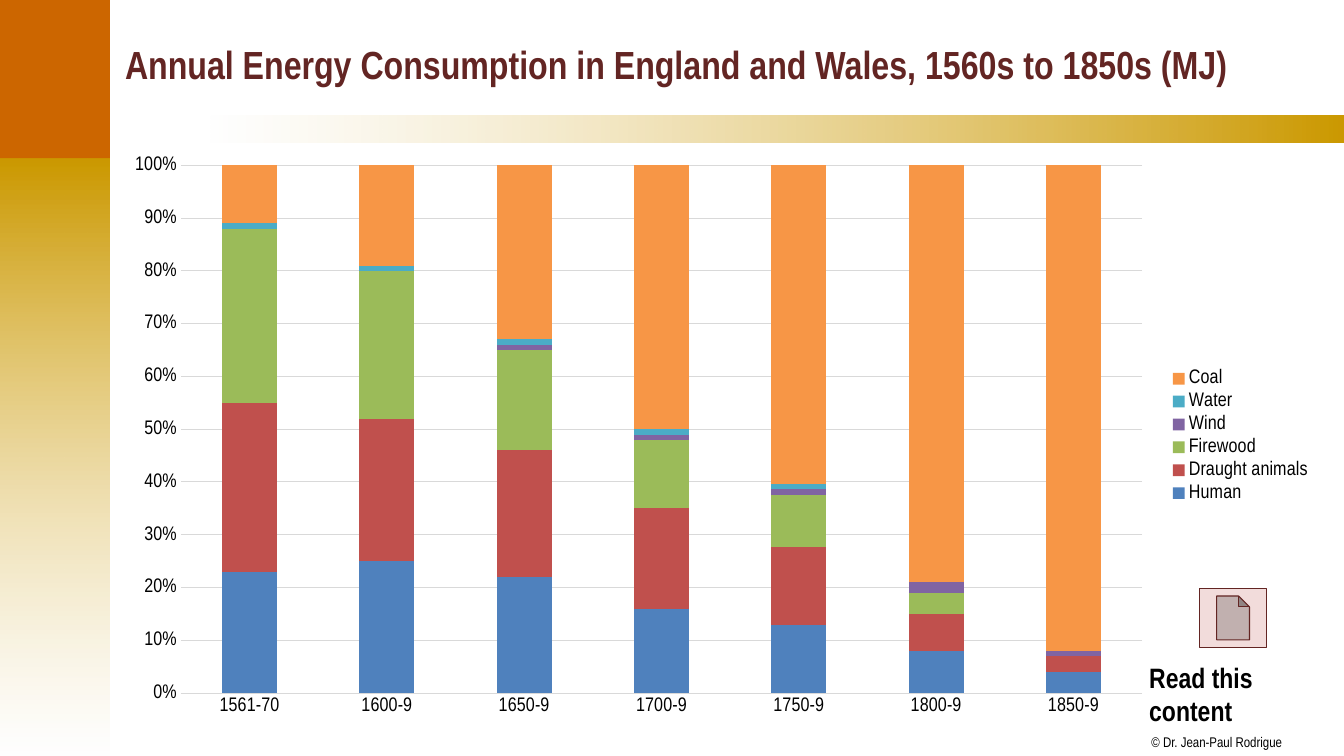
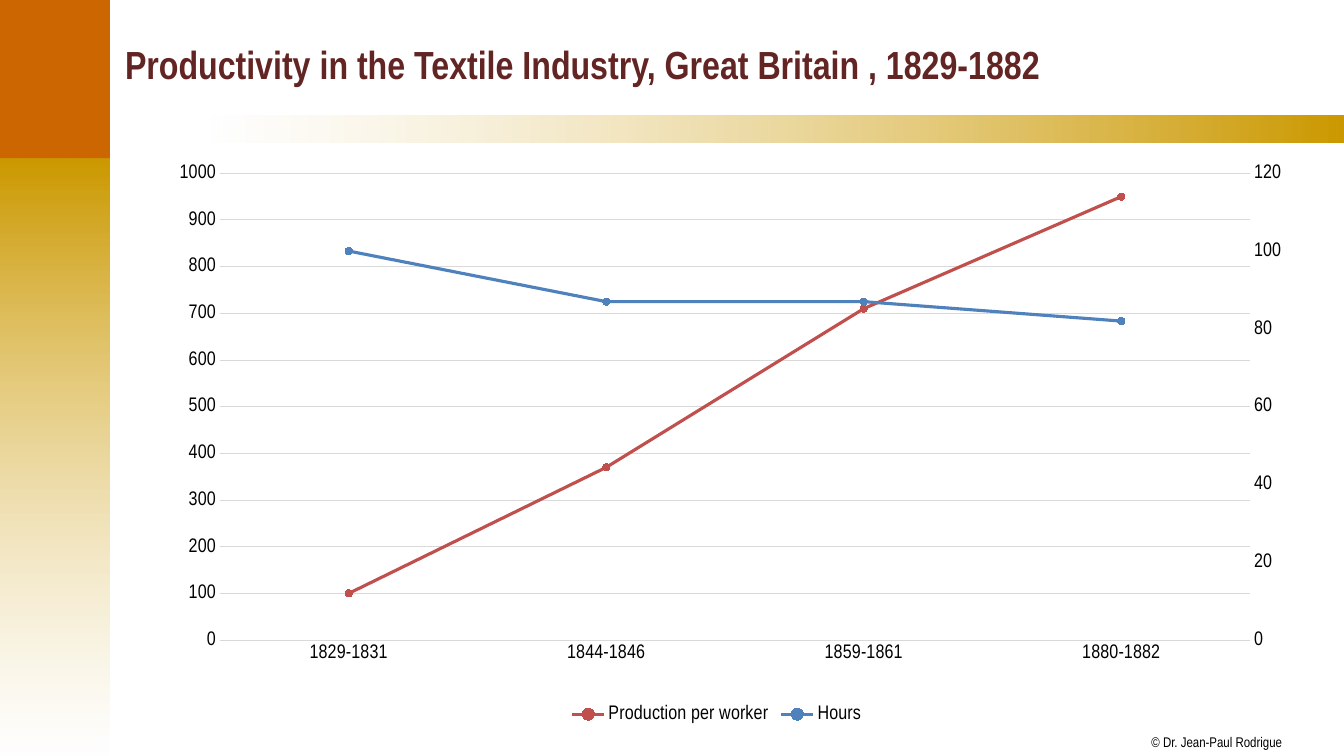
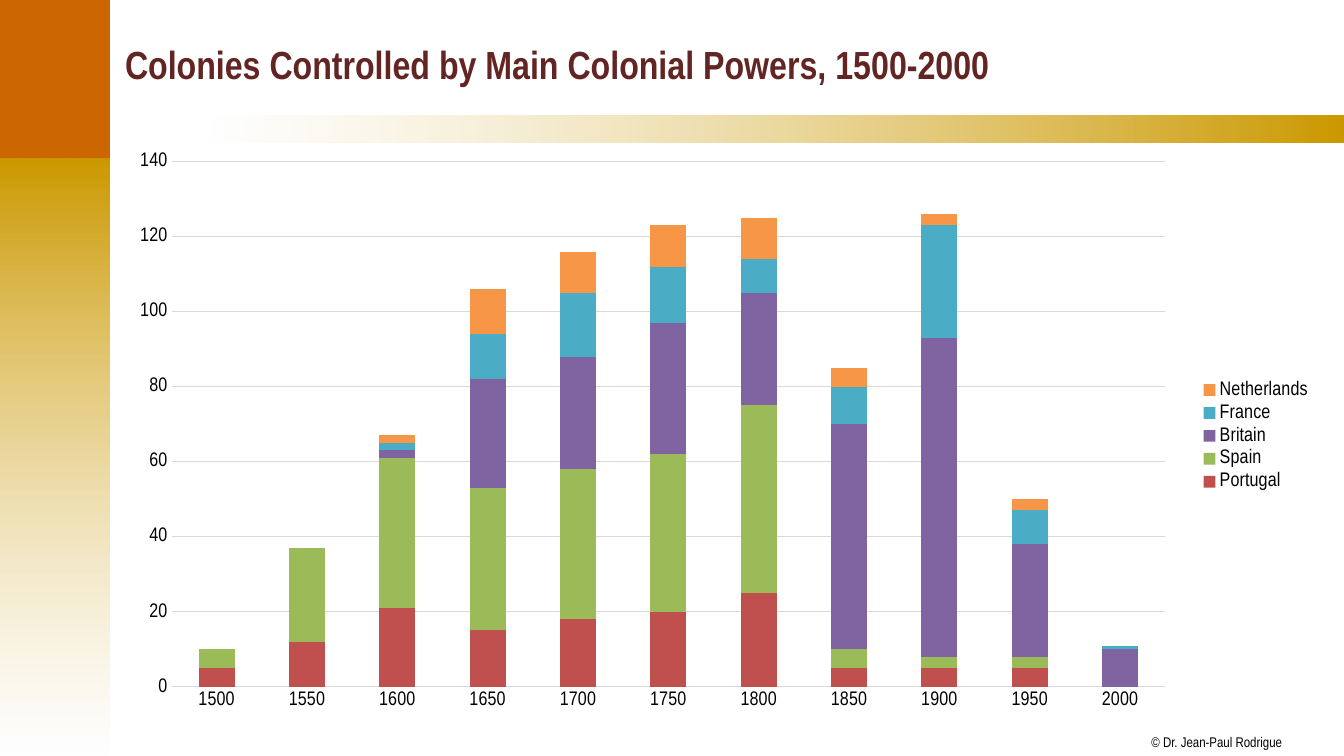
from copy import deepcopy

from lxml.etree import SubElement
from pptx import Presentation
from pptx.chart.data import CategoryChartData as ChartData
from pptx.dml.color import RGBColor
from pptx.enum.chart import XL_CHART_TYPE as CHART, XL_LEGEND_POSITION as SIDE
from pptx.enum.chart import XL_MARKER_STYLE as MARK, XL_TICK_MARK as TICK
from pptx.enum.shapes import MSO_SHAPE as SHAPE
from pptx.enum.text import MSO_ANCHOR as ANCHOR, MSO_AUTO_SIZE as SIZE, PP_ALIGN as ALIGN
from pptx.oxml.ns import qn
from pptx.util import Inches, Pt

FACE = "Arial Narrow"
BLACK, WHITE, MAROON = "000000", "FFFFFF", "632523"
ORANGE, GOLD, PINK, GREY = "CC6600", "CC9900", "F2DCDB", "D9D9D9"
BLUE, RED, GREEN = "4F81BD", "C0504D", "9BBB59"
PURPLE, AQUA, AMBER = "8064A2", "4BACC6", "F79646"


def color(code):
    """Turn a hex string into a colour."""
    return RGBColor.from_string(code)


def style(font, size, code=BLACK, bold=False):
    """Set the face, size, colour and weight of a font."""
    font.name, font.size, font.bold = FACE, Pt(size), bold
    font.color.rgb = color(code)


def write(frame, text, size, code=BLACK, bold=False):
    """Add one left-aligned run to the first paragraph of a frame."""
    para = frame.paragraphs[0]
    para.alignment = ALIGN.LEFT
    run = para.add_run()
    run.text = text
    style(run.font, size, code, bold)


def add_label(slide, box, text, size, bold=False, wrap=True, inset=None):
    """Add a text box that grows with its text."""
    label = slide.shapes.add_textbox(*map(Inches, box))
    frame = label.text_frame
    frame.word_wrap, frame.auto_size = wrap, SIZE.SHAPE_TO_FIT_TEXT
    if inset is not None:
        frame.margin_left = frame.margin_right = Inches(inset)
        frame.margin_top = frame.margin_bottom = Inches(inset)
    write(frame, text, size, bold=bold)
    return label


def add_block(slide, box, fill, kind=SHAPE.RECTANGLE, edge=None):
    """Add a flat shape with a plain fill and an optional outline."""
    block = slide.shapes.add_shape(kind, *map(Inches, box))
    block.shadow.inherit = False
    block.fill.solid()
    block.fill.fore_color.rgb = color(fill)
    if edge:
        block.line.color.rgb, block.line.width = color(edge), Pt(0.75)
    else:
        block.line.fill.background()
    return block


def add_fade(slide, box, stops, angle):
    """Add a rectangle that fades between two (colour, opacity) stops."""
    block = add_block(slide, box, WHITE)
    block.fill.gradient()
    block.fill.gradient_angle = angle
    for stop, (code, _) in zip(block.fill.gradient_stops, stops):
        stop.color.rgb = color(code)
    for tag, (_, alpha) in zip(block.element.iter(qn("a:srgbClr")), stops):
        if alpha < 100:
            SubElement(tag, qn("a:alpha"), val=str(alpha * 1000))
    return block


def dress(layout, slide):
    """Draw the shared bands and credit, then move them to the layout."""
    parts = [
        add_fade(slide, (-0.02, 1.57, 1.11, 5.93), [(GOLD, 100), (WHITE, 51)], 270),
        add_fade(slide, (2.09, 1.15, 11.25, 0.26), [(WHITE, 50), (GOLD, 100)], 0),
        add_label(slide, (11.42, 7.28, 1.31, 0.17), "© Dr. Jean-Paul Rodrigue",
                  10, wrap=False, inset=0),
        add_block(slide, (-0.02, -0.01, 1.11, 1.58), ORANGE),
    ]
    for num, part in enumerate(parts, 20):
        part.element.nvSpPr.cNvPr.set("id", str(num))
        layout.shapes.element.append(part.element)


def place_title(layout):
    """Set the place and anchor of every title."""
    title = layout.placeholders[0]
    title.left, title.top, title.width, title.height = map(Inches, (1.14, 0.11, 11.97, 1.04))
    title.text_frame.vertical_anchor = ANCHOR.MIDDLE
    title.text_frame.auto_size = SIZE.NONE


def add_page(deck, layout, title):
    """Add a slide with its title."""
    slide = deck.slides.add_slide(layout)
    write(slide.shapes.title.text_frame, title, 28, MAROON, True)
    return slide


def set_plot(chart, plot):
    """Fix the inner plot area as shares of the chart."""
    area = chart.element.find(".//" + qn("c:plotArea"))
    for old in area.findall(qn("c:layout")):
        area.remove(old)
    layout = SubElement(area, qn("c:layout"))
    area.insert(0, layout)
    manual = SubElement(layout, qn("c:manualLayout"))
    pairs = [("layoutTarget", "inner"), ("xMode", "edge"), ("yMode", "edge")]
    for tag, val in pairs + list(zip("xywh", plot)):
        SubElement(manual, qn("c:" + tag), val=str(val))


def add_graph(slide, kind, cats, rows, side, plot=None, form="General"):
    """Add a chart from (name, colour, values) rows, with styled axes."""
    data = ChartData()
    data.categories = cats
    for name, _, vals in rows:
        data.add_series(name, vals)
    box = map(Inches, (1.1, 1.43, 12.02, 5.79))
    chart = slide.shapes.add_chart(kind, *box, data).chart
    chart.has_title, chart.has_legend = False, True
    chart.legend.position, chart.legend.include_in_layout = side, False
    style(chart.font, 14)
    style(chart.legend.font, 14)
    chart.plots[0].vary_by_categories = False
    for axis in (chart.category_axis, chart.value_axis):
        axis.major_tick_mark = axis.minor_tick_mark = TICK.NONE
        style(axis.tick_labels.font, 14)
    chart.value_axis.tick_labels.number_format = form
    chart.value_axis.tick_labels.number_format_is_linked = False
    chart.value_axis.format.line.fill.background()
    chart.value_axis.has_major_gridlines = True
    for line in (chart.category_axis.format.line, chart.value_axis.major_gridlines.format.line):
        line.color.rgb, line.width = color(GREY), Pt(0.75)
    if plot:
        set_plot(chart, plot)
    return chart


def add_stack(slide, kind, cats, rows, **more):
    """Add a stacked column chart with a legend on the right."""
    chart = add_graph(slide, kind, cats, rows, SIDE.RIGHT, **more)
    chart.plots[0].gap_width, chart.plots[0].overlap = 150, 100
    for series, (_, code, _) in zip(chart.series, rows):
        series.format.fill.solid()
        series.format.fill.fore_color.rgb = color(code)


def split_axis(chart):
    """Move the last series to a second value axis on the right."""
    area = chart.element.find(".//" + qn("c:plotArea"))
    first, cat, val = (area.find(qn("c:" + tag)) for tag in ("lineChart", "catAx", "valAx"))
    twins = [deepcopy(part) for part in (first, cat, val)]
    plot, base, right = twins
    first.remove(first.findall(qn("c:ser"))[-1])
    for old in plot.findall(qn("c:ser"))[:-1]:
        plot.remove(old)
    ids = {cat.find(qn("c:axId")).get("val"): "501", val.find(qn("c:axId")).get("val"): "502"}
    for twin in twins:
        for tag in twin.iter(qn("c:axId"), qn("c:crossAx")):
            tag.set("val", ids[tag.get("val")])
    base.find(qn("c:delete")).set("val", "1")
    right.find(qn("c:axPos")).set("val", "r")
    right.find(qn("c:crosses")).set("val", "max")
    right.remove(right.find(qn("c:majorGridlines")))
    first.addnext(plot)
    val.addnext(right)
    right.addnext(base)


def add_lines(slide, cats, rows, plot):
    """Add a line chart whose last series uses the right axis."""
    chart = add_graph(slide, CHART.LINE_MARKERS, cats, rows, SIDE.BOTTOM, plot)
    for series, (_, code, _) in zip(chart.series, rows):
        series.smooth = False
        series.format.line.color.rgb, series.format.line.width = color(code), Pt(2.25)
        mark = series.marker
        mark.style, mark.size = MARK.CIRCLE, 5
        mark.format.fill.solid()
        mark.format.fill.fore_color.rgb = color(code)
        mark.format.line.color.rgb = color(code)
    split_axis(chart)


def main():
    """Build the three slides and save them."""
    deck = Presentation()
    deck.slide_width, deck.slide_height = Inches(13.33), Inches(7.5)
    layout = deck.slide_layouts[5]
    place_title(layout)

    slide = add_page(deck, layout,
                     "Annual Energy Consumption in England and Wales, 1560s to 1850s (MJ)")
    dress(layout, slide)
    add_stack(slide, CHART.COLUMN_STACKED_100,
              ["1561-70", "1600-9", "1650-9", "1700-9", "1750-9", "1800-9", "1850-9"],
              [("Human", BLUE, [23, 25, 22, 16, 13, 8, 4]),
               ("Draught animals", RED, [32, 27, 24, 19, 15, 7, 3]),
               ("Firewood", GREEN, [33, 28, 19, 13, 10, 4, 0]),
               ("Wind", PURPLE, [0, 0, 1, 1, 1, 2, 1]),
               ("Water", AQUA, [1, 1, 1, 1, 1, 0, 0]),
               ("Coal", AMBER, [11, 19, 33, 50, 61, 79, 92])],
              form="0%")
    add_block(slide, (11.9, 5.84, 0.66, 0.58), PINK, SHAPE.ACTION_BUTTON_DOCUMENT, MAROON)
    add_label(slide, (11.3, 6.5, 1.86, 0.44), "Read this content", 20, bold=True)

    slide = add_page(deck, layout,
                     "Productivity in the Textile Industry, Great Britain , 1829-1882")
    add_lines(slide, ["1829-1831", "1844-1846", "1859-1861", "1880-1882"],
              [("Production per worker", RED, [100, 370, 710, 950]),
               ("Hours", BLUE, [100, 87, 87, 82])],
              (0.09, 0.05, 0.85, 0.8))

    slide = add_page(deck, layout, "Colonies Controlled by Main Colonial Powers, 1500-2000")
    add_stack(slide, CHART.COLUMN_STACKED, [str(year) for year in range(1500, 2001, 50)],
              [("Portugal", RED, [5, 12, 21, 15, 18, 20, 25, 5, 5, 5, 0]),
               ("Spain", GREEN, [5, 25, 40, 38, 40, 42, 50, 5, 3, 3, 0]),
               ("Britain", PURPLE, [0, 0, 2, 29, 30, 35, 30, 60, 85, 30, 10]),
               ("France", AQUA, [0, 0, 2, 12, 17, 15, 9, 10, 30, 9, 1]),
               ("Netherlands", AMBER, [0, 0, 2, 12, 11, 11, 11, 5, 3, 3, 0])],
              plot=(0.05, 0.03, 0.82, 0.9))

    deck.save("out.pptx")


if __name__ == "__main__":
    main()
